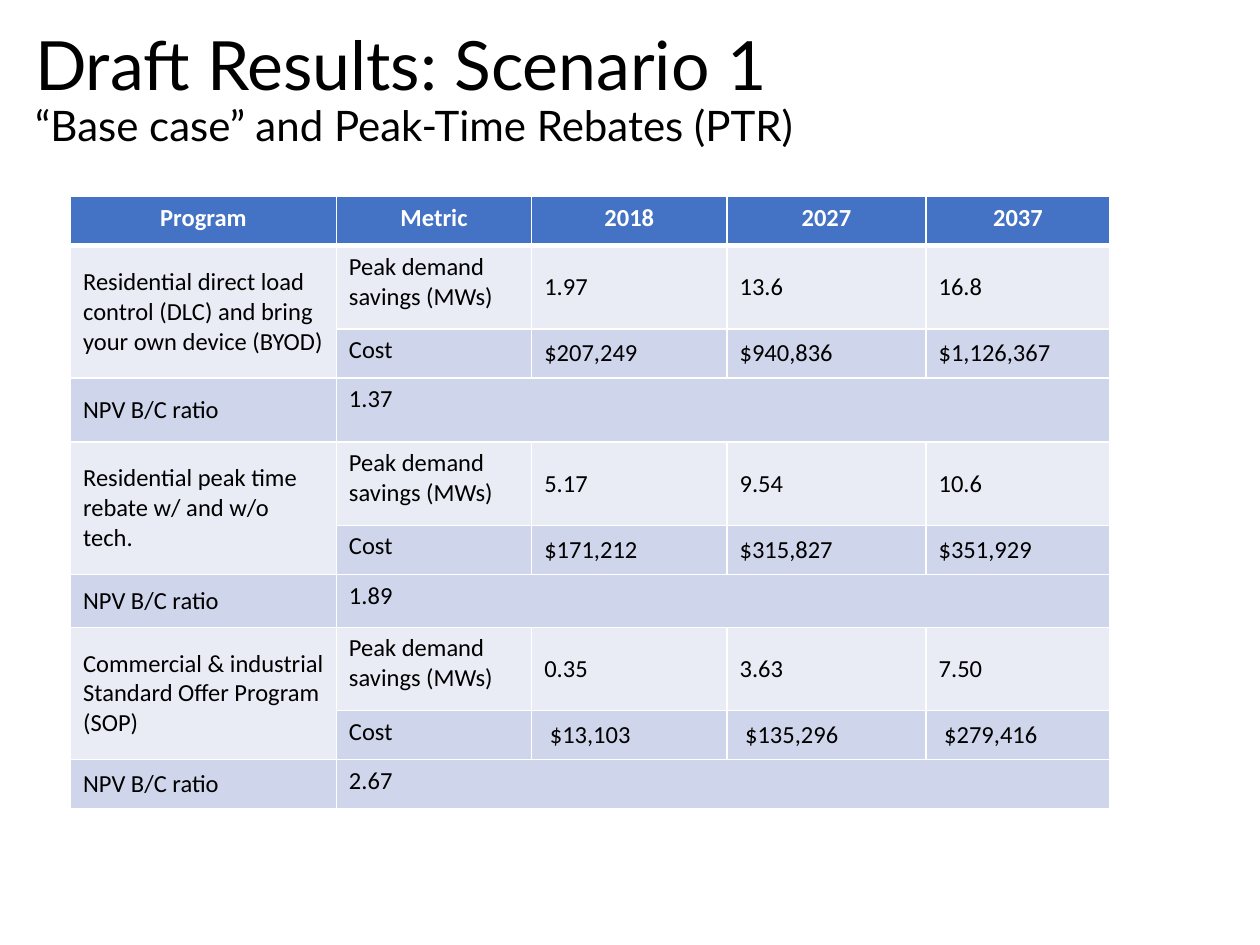
import pptx
import pptx.dml.color
import pptx.enum.text
import pptx.oxml
import pptx.oxml.ns
import pptx.util

ALIGN = pptx.enum.text.PP_ALIGN
ANCHOR = pptx.enum.text.MSO_ANCHOR
PAGE_WIDTH, PAGE_HEIGHT = 10, 7.5
BLACK, WHITE = "000000", "FFFFFF"
HEADER_FILL, LIGHT_FILL, DARK_FILL = "4472C4", "E9EBF5", "CFD5EA"

COLUMN_WIDTHS = [2.11, 1.55, 1.55, 1.58, 1.46]
HEADER_HEIGHT, SAVINGS_HEIGHT, COST_HEIGHT = 0.39, 0.66, 0.39
HEADINGS = ["Program", "Metric", "2018", "2027", "2037"]
# Program, savings by year, cost by year, ratio, height of the ratio row
PROGRAMS = [
    ("Residential direct load control (DLC) and bring your own device (BYOD)",
     ["1.97", "13.6", "16.8"], ["$207,249", "$940,836", "$1,126,367"], "1.37", 0.51),
    ("Residential peak time rebate w/ and w/o tech.",
     ["5.17", "9.54", "10.6"], ["$171,212", "$315,827", "$351,929"], "1.89", 0.42),
    ("Commercial & industrial Standard Offer Program (SOP)",
     ["0.35", "3.63", "7.50"], [" $13,103", " $135,296", " $279,416"], "2.67", 0.39),
]


def color(value):
    return pptx.dml.color.RGBColor.from_string(value)


def write(para, text, size=14, font="Calibri", ink=BLACK, bold=False, align=ALIGN.LEFT):
    para.alignment = align
    span = para.add_run()
    span.text = text
    span.font.size = pptx.util.Pt(size)
    span.font.name = font
    span.font.bold = bold
    span.font.color.rgb = color(ink)


def add_title(page, box, title, subtitle):
    shape = page.shapes.add_textbox(*map(pptx.util.Inches, box))
    frame = shape.text_frame
    frame.word_wrap = True
    frame.vertical_anchor = ANCHOR.MIDDLE
    para = frame.paragraphs[0]
    para.line_spacing = 0.9
    write(para, title, size=38.8, font="Lato")
    para.add_line_break()
    write(para, subtitle, size=24, font="Lato")


def set_borders(cell, top=1, bottom=1):
    properties = cell._tc.get_or_add_tcPr()
    for side, width in (("L", 1), ("R", 1), ("T", top), ("B", bottom)):
        properties.append(pptx.oxml.parse_xml(
            f'<a:ln{side} {pptx.oxml.ns.nsdecls("a")} w="{pptx.util.Pt(width)}">'
            f'<a:solidFill><a:srgbClr val="{WHITE}"/></a:solidFill></a:ln{side}>'))


def fill_row(table, row, texts, fill, anchors, **text_format):
    """Style every cell of a row; a text of None leaves its cell empty."""
    for column, (text, anchor) in enumerate(zip(texts, anchors)):
        cell = table.cell(row, column)
        set_borders(cell, top=3 if row == 1 else 1, bottom=3 if row == 0 else 1)
        cell.fill.solid()
        cell.fill.fore_color.rgb = color(fill)
        cell.vertical_anchor = anchor
        if text is not None:
            write(cell.text_frame.paragraphs[0], text, **text_format)


def add_program(table, row, program, savings, costs, ratio):
    """Fill the three rows of one program, starting at the given row."""
    anchors = [ANCHOR.MIDDLE, ANCHOR.TOP] + [ANCHOR.MIDDLE] * 3
    table.cell(row, 0).merge(table.cell(row + 1, 0))
    table.cell(row + 2, 1).merge(table.cell(row + 2, 4))
    fill_row(table, row, [program, "Peak demand savings (MWs)"] + savings, LIGHT_FILL, anchors)
    fill_row(table, row + 1, [None, "Cost"] + costs, DARK_FILL, anchors)
    fill_row(table, row + 2, ["NPV B/C ratio", ratio] + [None] * 3, DARK_FILL, anchors)


def add_results(page, left, top):
    heights = [HEADER_HEIGHT]
    for program in PROGRAMS:
        heights += [SAVINGS_HEIGHT, COST_HEIGHT, program[-1]]
    box = (left, top, sum(COLUMN_WIDTHS), sum(heights))
    table = page.shapes.add_table(
        len(heights), len(COLUMN_WIDTHS), *map(pptx.util.Inches, box)).table
    for column, width in zip(table.columns, COLUMN_WIDTHS):
        column.width = pptx.util.Inches(width)
    for row, height in zip(table.rows, heights):
        row.height = pptx.util.Inches(height)
    fill_row(table, 0, HEADINGS, HEADER_FILL, [ANCHOR.TOP] * 5,
             ink=WHITE, bold=True, align=ALIGN.CENTER)
    for index, (*contents, _) in enumerate(PROGRAMS):
        add_program(table, 1 + 3 * index, *contents)


def main():
    deck = pptx.Presentation()
    deck.slide_width = pptx.util.Inches(PAGE_WIDTH)
    deck.slide_height = pptx.util.Inches(PAGE_HEIGHT)
    page = deck.slides.add_slide(deck.slide_layouts[6])
    add_title(page, (0.18, 0, 8.62, 1.45), "Draft Results: Scenario 1",
              "“Base case” and Peak-Time Rebates (PTR)")
    add_results(page, 0.56, 1.56)
    deck.save("out.pptx")


if __name__ == "__main__":
    main()
